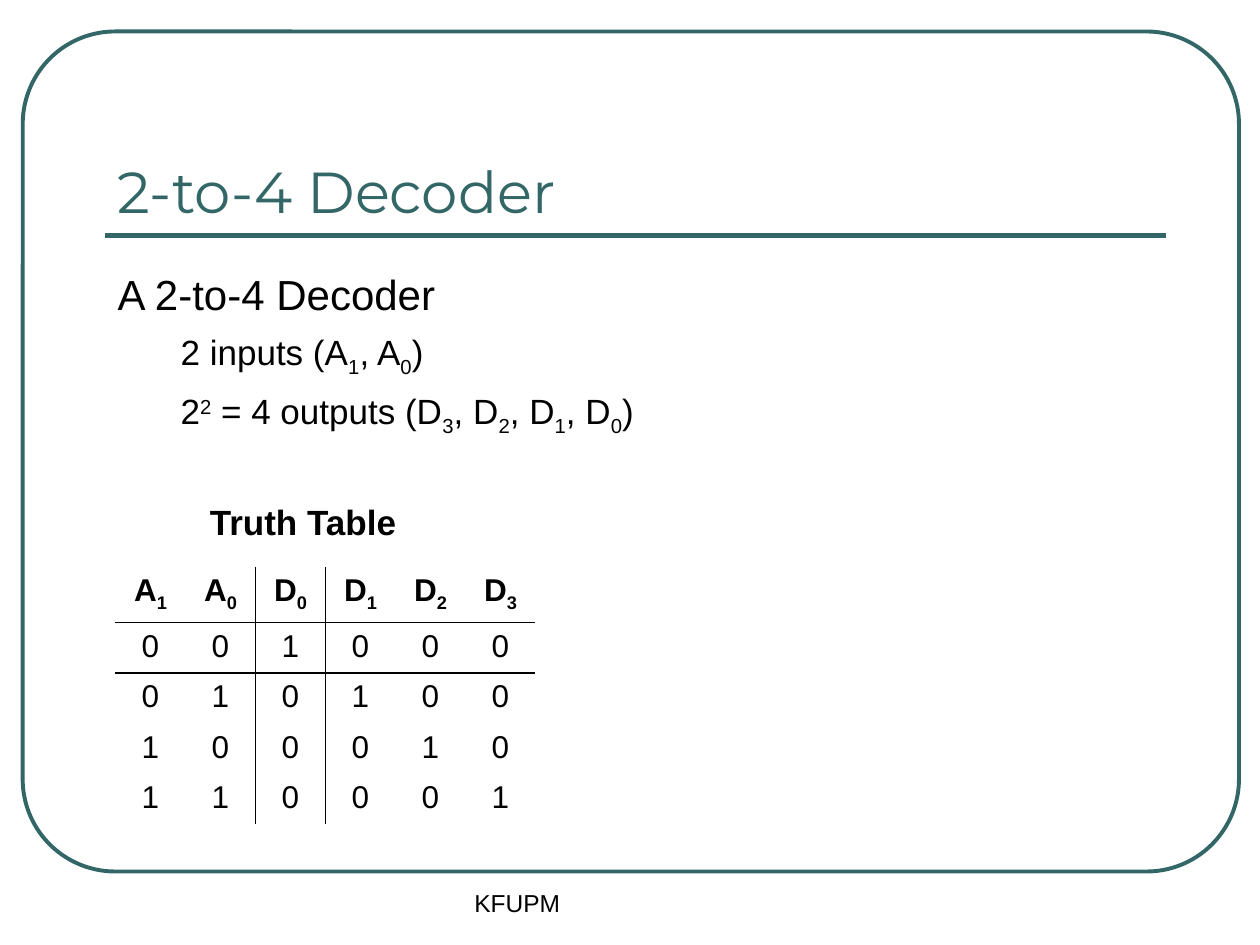
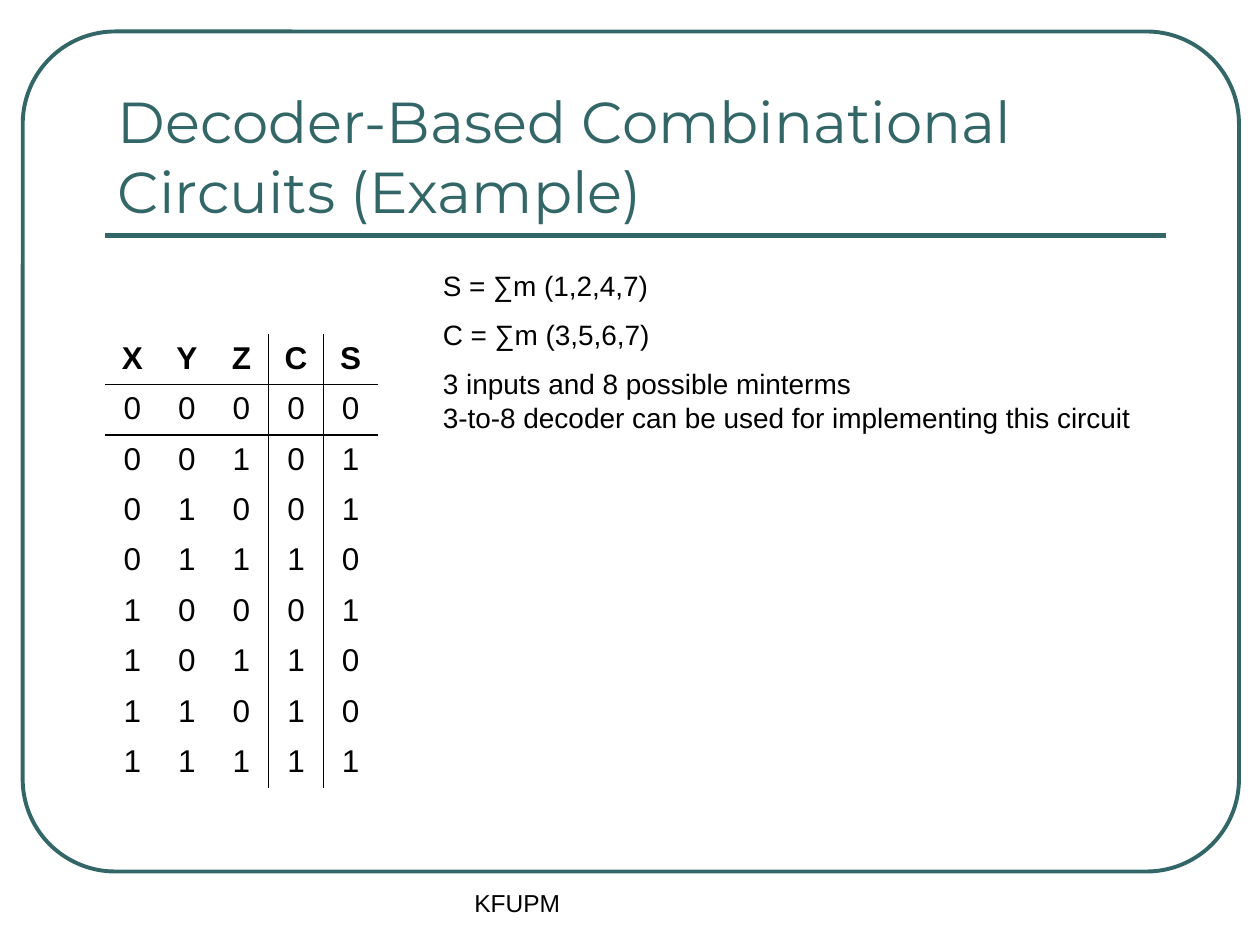
from dataclasses import dataclass

from pptx import Presentation
from pptx.dml import color
from pptx.enum import shapes, text
from pptx.oxml import ns, xmlchemy
from pptx.util import Pt


@dataclass(frozen=True)
class Theme:
    """Colours, fonts and type sizes shared by the slides."""
    teal: color.RGBColor = color.RGBColor(0x33, 0x66, 0x66)
    black: color.RGBColor = color.RGBColor(0, 0, 0)
    white: color.RGBColor = color.RGBColor(255, 255, 255)
    head: str = "Montserrat"
    body: str = "Arial"
    title: int = 33
    lead: int = 24
    item: int = 20
    cell: int = 18
    note: int = 16
    foot: int = 14


T = Theme()

POINTS = [
    ("A 2-to-4 Decoder", T.lead, 0, 0, 7.8, False),
    ("2 inputs (A|1|, A|0|)", T.item, 1, 36, 6.5, False),
    ("2|^2| = 4 outputs (D|3|, D|2|, D|1|, D|0|)", T.item, 1, 36, 6.5, False),
    ("Truth Table", T.item, 1, 52.7, 36, True),
]
NOTES = [
    "S = ∑m (1,2,4,7)",
    "C = ∑m (3,5,6,7)",
    "3 inputs and 8 possible minterms\n"
    "3-to-8 decoder can be used for implementing this circuit",
]


def child(parent, tag, **attrs):
    """Append an XML element with the given attributes."""
    node = xmlchemy.OxmlElement(tag)
    for name, value in attrs.items():
        node.set(name, str(value))
    parent.append(node)
    return node


def style(par, size, name=T.body, tint=T.black, bold=False):
    """Set the font of a paragraph."""
    font = par.font
    font.size, font.name, font.bold = Pt(size), name, bold
    font.color.rgb = tint


def write(par, line):
    """Add runs, lowering each part between bars or raising it after ^."""
    for i, part in enumerate(line.split("|")):
        run = par.add_run()
        run.text = part.lstrip("^")
        if i % 2:
            base = 30000 if part.startswith("^") else -25000
            run.font._element.set("baseline", str(base))


def place(shape, left, top, width, height):
    """Move and size a shape in points."""
    shape.left, shape.top = Pt(left), Pt(top)
    shape.width, shape.height = Pt(width), Pt(height)


def frame(slide):
    """Draw the rounded border and the rule under the title."""
    box = slide.shapes.add_shape(
        shapes.MSO_SHAPE.ROUNDED_RECTANGLE, Pt(13), Pt(18), Pt(695), Pt(480))
    box.adjustments[0] = 0.11
    box.fill.background()
    box.shadow.inherit = False
    rule = slide.shapes.add_connector(
        shapes.MSO_CONNECTOR.STRAIGHT, Pt(60), Pt(134.6), Pt(666), Pt(134.6))
    child(rule._element.spPr, "a:effectLst")
    for shape, width in ((box, 2.25), (rule, 3)):
        shape.line.color.rgb = T.teal
        shape.line.width = Pt(width)


def label(slide, lines, size, left, top, width, height, gap=0):
    """Add a wrapped text box with one paragraph for each line."""
    box = slide.shapes.add_textbox(Pt(left), Pt(top), Pt(width), Pt(height))
    area = box.text_frame
    area.word_wrap = True
    for i, line in enumerate(lines):
        par = area.add_paragraph() if i else area.paragraphs[0]
        par.text = line
        par.space_before = Pt(gap)
        style(par, size)


def start(deck, layout, title):
    """Add a slide with its border, title and footer."""
    slide = deck.slides.add_slide(deck.slide_layouts[layout])
    frame(slide)
    head = slide.shapes.title
    place(head, 60, 42, 605.5, 90)
    area = head.text_frame
    area.text = title
    area.auto_size = text.MSO_AUTO_SIZE.NONE
    area.vertical_anchor = text.MSO_ANCHOR.BOTTOM
    par = area.paragraphs[0]
    par.alignment = text.PP_ALIGN.LEFT
    style(par, T.title, T.head, T.teal)
    label(slide, ["KFUPM"], T.foot, 264, 504, 227.5, 36)
    return slide


def outline(slide, points):
    """Fill the body placeholder with unbulleted levels."""
    body = slide.placeholders[1]
    place(body, 60, 150, 605.5, 317.5)
    area = body.text_frame
    area.auto_size = text.MSO_AUTO_SIZE.NONE
    for i, (line, size, level, left, gap, bold) in enumerate(points):
        par = area.add_paragraph() if i else area.paragraphs[0]
        props = par._p.get_or_add_pPr()
        props.set("marL", str(Pt(left)))
        props.set("indent", "0")
        child(props, "a:buNone")
        par.level = level
        par.space_before = Pt(gap)
        style(par, size, bold=bold)
        write(par, line)


def edge(cell, sides):
    """Draw thin black borders on the named sides of a cell."""
    props = cell._tc.get_or_add_tcPr()
    for side in sides:
        line = child(props, "a:ln" + side, w=Pt(1))
        child(child(line, "a:solidFill"), "a:srgbClr", val=T.black)


def truth(slide, heads, rows, split, left, top, width, height):
    """Add a truth table ruled below its heads and before column split."""
    grid = [heads.split()] + [list(row) for row in rows]
    count = len(grid[0])
    table = slide.shapes.add_table(
        len(grid), count, Pt(left), Pt(top),
        Pt(width * count), Pt(height * len(grid))).table
    table.first_row = table.horz_banding = False
    plain = table._tbl.tblPr.find(ns.qn("a:tableStyleId"))
    plain.text = "{2D5ABB26-0587-4C30-8999-92F81FD0307C}"
    for col in table.columns:
        col.width = Pt(width)
    for r, row in enumerate(grid):
        table.rows[r].height = Pt(height)
        for c, value in enumerate(row):
            cell = table.cell(r, c)
            edge(cell, {split: "L", split - 1: "R"}.get(c, "")
                 + {0: "B", 1: "T"}.get(r, ""))
            cell.fill.solid()
            cell.fill.fore_color.rgb = T.white
            par = cell.text_frame.paragraphs[0]
            par.alignment = text.PP_ALIGN.CENTER
            style(par, T.cell, bold=r == 0)
            write(par, value.rstrip("|"))


def main():
    """Build both slides and save them."""
    deck = Presentation()
    deck.slide_width, deck.slide_height = Pt(720), Pt(540)

    slide = start(deck, 1, "2-to-4 Decoder")
    outline(slide, POINTS)
    codes = [f"{n:02b}{1 << (3 - n):04b}" for n in range(4)]
    truth(slide, "A|1 A|0 D|0 D|1 D|2 D|3", codes, 2, 66, 324, 40, 27.4)

    slide = start(deck, 5, "Decoder-Based Combinational Circuits (Example)")
    sums = [f"{n:03b}{bin(n).count('1'):02b}" for n in range(8)]
    truth(slide, "X Y Z C S", sums, 3, 60, 191, 31.2, 24)
    label(slide, NOTES, T.note, 246, 150, 474, 133, 8.8)

    deck.save("out.pptx")


if __name__ == "__main__":
    main()
